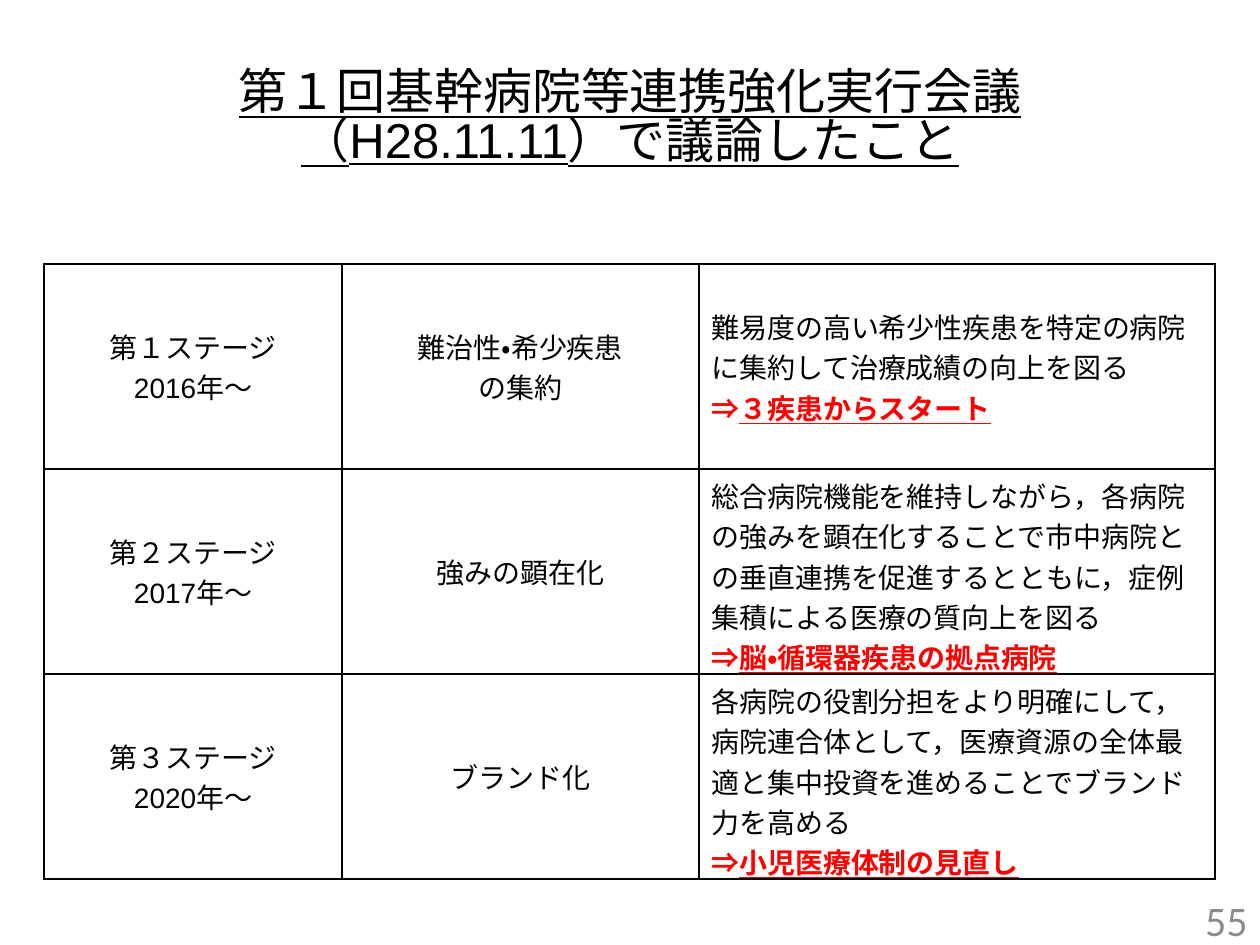
"""Build the slide on the three stages discussed at the first hospital meeting."""
import pptx
import pptx.dml.color
import pptx.enum.lang
import pptx.enum.text
import pptx.oxml
import pptx.oxml.ns
import pptx.util

TITLE = ["第１回基幹病院等連携強化実行会議", "（H28.11.11）で議論したこと"]
PAGE_NUMBER = "55"
STAGES = [
    (["第１ステージ", "2016年～"], ["難治性・希少疾患", "の集約"],
     "難易度の高い希少性疾患を特定の病院に集約して治療成績の向上を図る",
     "３疾患からスタート"),
    (["第２ステージ", "2017年～"], ["強みの顕在化"],
     "総合病院機能を維持しながら，各病院の強みを顕在化することで市中病院との垂直連携を促進するとともに，症例集積による医療の質向上を図る",
     "脳・循環器疾患の拠点病院"),
    (["第３ステージ", "2020年～"], ["ブランド化"],
     "各病院の役割分担をより明確にして，病院連合体として，医療資源の全体最適と集中投資を進めることでブランド力を高める",
     "小児医療体制の見直し"),
]
ARROW = "⇒"

THEME = {
    "font": "Arial", "number_font": "Calibri",
    "ink": "000000", "accent": "FF0000", "muted": "8C8C8C", "paper": "FFFFFF",
    "title": 28, "body": 16, "number": 24, "title_spacing": 0.83, "border": 1,
}
PX = pptx.util.Inches(1) // 126
SLIDE = (1260, 945)
TITLE_BOX = (0, 55, 1260, 129)
NUMBER_BOX = (966, 895, 294, 50)
TABLE_AT = (44, 264)
COLUMNS = [298, 357, 516]
ROW = 205
ALIGN = pptx.enum.text.PP_ALIGN
MIDDLE = pptx.enum.text.MSO_ANCHOR.MIDDLE


def scaled(*lengths):
    return [length * PX for length in lengths]


def color(name):
    return pptx.dml.color.RGBColor.from_string(THEME[name])


def add_span(para, text, size="body", ink="ink", font="font", bold=False, underline=False):
    span = para.add_run()
    span.text = text
    span.font.name = THEME[font]
    span.font.size = pptx.util.Pt(THEME[size])
    span.font.color.rgb = color(ink)
    span.font.bold = bold
    span.font.underline = underline
    span.font.language_id = pptx.enum.lang.MSO_LANGUAGE_ID.JAPANESE


def add_para(frame, index, align):
    para = frame.add_paragraph() if index else frame.paragraphs[0]
    para.alignment = align
    return para


def add_borders(cell):
    properties = cell._tc.get_or_add_tcPr()
    width = pptx.util.Pt(THEME["border"])
    for position, side in enumerate(("lnL", "lnR", "lnT", "lnB")):
        properties.insert(position, pptx.oxml.parse_xml(
            f'<a:{side} {pptx.oxml.ns.nsdecls("a")} w="{width}"><a:solidFill>'
            f'<a:srgbClr val="{THEME["ink"]}"/></a:solidFill></a:{side}>'))


def add_title(page):
    title = page.shapes.title
    title.left, title.top, title.width, title.height = scaled(*TITLE_BOX)
    frame = title.text_frame
    frame.auto_size = pptx.enum.text.MSO_AUTO_SIZE.NONE
    frame.vertical_anchor = MIDDLE
    para = add_para(frame, 0, ALIGN.CENTER)
    para.line_spacing = THEME["title_spacing"]
    for index, line in enumerate(TITLE):
        if index:
            para.add_line_break()
        add_span(para, line, size="title", underline=True)


def add_stages(page):
    size = scaled(sum(COLUMNS), ROW * len(STAGES))
    table = page.shapes.add_table(len(STAGES), len(COLUMNS), *scaled(*TABLE_AT), *size).table
    table.first_row = table.horz_banding = False
    for column, width in zip(table.columns, COLUMNS):
        column.width = width * PX
    for row, (stage, theme, detail, result) in zip(table.rows, STAGES):
        row.height = ROW * PX
        for cell in row.cells:
            cell.fill.solid()
            cell.fill.fore_color.rgb = color("paper")
            cell.vertical_anchor = MIDDLE
            add_borders(cell)
        for cell, lines in zip(row.cells, (stage, theme)):
            for index, line in enumerate(lines):
                add_span(add_para(cell.text_frame, index, ALIGN.CENTER), line)
        frame = row.cells[2].text_frame
        add_span(add_para(frame, 0, ALIGN.LEFT), detail)
        para = add_para(frame, 1, ALIGN.LEFT)
        add_span(para, ARROW, ink="accent", bold=True)
        add_span(para, result, ink="accent", bold=True, underline=True)


def add_number(page):
    frame = page.shapes.add_textbox(*scaled(*NUMBER_BOX)).text_frame
    frame.word_wrap = True
    frame.vertical_anchor = MIDDLE
    para = add_para(frame, 0, ALIGN.RIGHT)
    add_span(para, PAGE_NUMBER, size="number", ink="muted", font="number_font")


def main():
    deck = pptx.Presentation()
    deck.slide_width, deck.slide_height = scaled(*SLIDE)
    page = deck.slides.add_slide(deck.slide_layouts[5])
    add_number(page)
    add_title(page)
    add_stages(page)
    deck.save("out.pptx")


if __name__ == "__main__":
    main()
